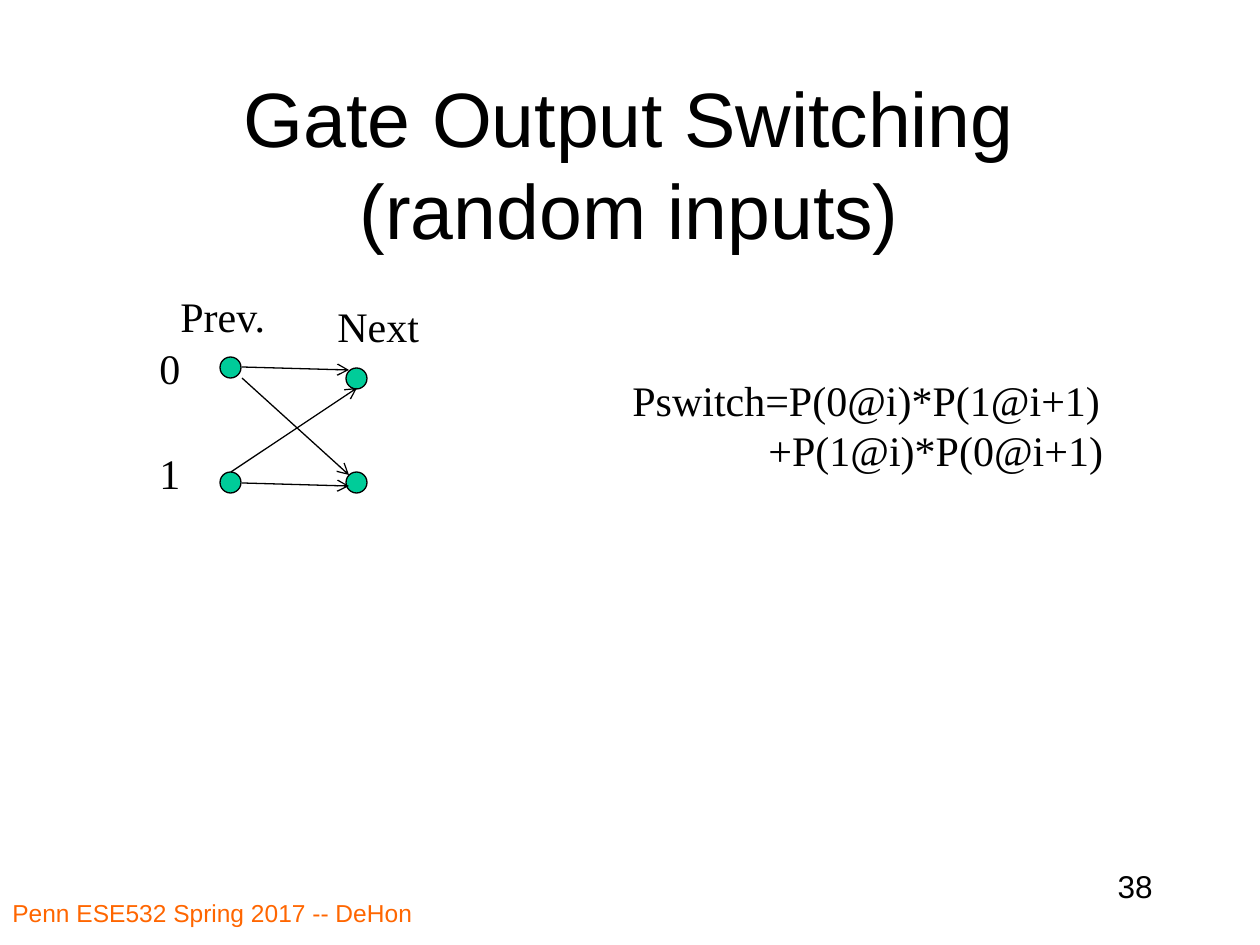
from typing import NamedTuple

from lxml import etree
from pptx import Presentation
from pptx.dml.color import RGBColor
from pptx.enum.shapes import MSO_CONNECTOR, MSO_SHAPE
from pptx.enum.text import MSO_ANCHOR, PP_ALIGN
from pptx.oxml.ns import qn
from pptx.slide import Slide
from pptx.util import Emu, Pt

LEFT, CENTER, RIGHT = PP_ALIGN.LEFT, PP_ALIGN.CENTER, PP_ALIGN.RIGHT
TOP, MIDDLE = MSO_ANCHOR.TOP, MSO_ANCHOR.MIDDLE
OVAL, STRAIGHT = MSO_SHAPE.OVAL, MSO_CONNECTOR.STRAIGHT

PX_PER_INCH = 126
BLACK, GREEN, ORANGE = "000000", "00CC99", "FF6600"
SANS, SERIF = "Arial", "Times New Roman"
DOT_SIZE = 21
LINE_WIDTH = Pt(0.75)
FORMULA_INDENT = 136


class Label(NamedTuple):
    lines: tuple[str, ...]
    left: int
    top: int
    width: int
    height: int
    size: int = 24
    font: str = SERIF
    color: str = BLACK
    align: PP_ALIGN = LEFT
    anchor: MSO_ANCHOR = TOP
    wrap: bool = False
    indent: int = 0  # left margin of the lines after the first


class Arrow(NamedTuple):
    start_x: int
    start_y: int
    end_x: int
    end_y: int


LABELS = (
    Label(("Penn ESE532 Spring 2017 -- DeHon",), 0, 892, 514, 53,
          14, SANS, ORANGE, wrap=True),
    Label(("38",), 903, 861, 262, 63, 18, SANS, align=RIGHT, wrap=True),
    Label(("Prev.",), 168, 284, 111, 63),
    Label(("Next",), 325, 294, 111, 63),
    Label(("0",), 147, 336, 47, 63),
    Label(("1",), 147, 441, 47, 63),
    Label(("Pswitch=P(0@i)*P(1@i+1)", "+P(1@i)*P(0@i+1)"),
          620, 368, 498, 115, indent=FORMULA_INDENT),
)
TITLE = Label(("Gate Output Switching", "(random inputs)"), 94, 84, 1071, 158,
              44, SANS, align=CENTER, anchor=MIDDLE, wrap=True)
DOTS = ((220, 357), (346, 368), (220, 472), (346, 472))
ARROWS = (
    Arrow(242, 367, 349, 370),
    Arrow(242, 378, 349, 475),
    Arrow(231, 472, 357, 388),
    Arrow(242, 483, 349, 486),
)


def px(length: int) -> Emu:
    return Emu(round(length * 914400 / PX_PER_INCH))


def rgb(value: str) -> RGBColor:
    return RGBColor.from_string(value)


def add_label(slide: Slide, label: Label) -> None:
    box = slide.shapes.add_textbox(
        px(label.left), px(label.top), px(label.width), px(label.height))
    frame = box.text_frame
    frame.word_wrap = label.wrap
    frame.vertical_anchor = label.anchor
    for number, line in enumerate(label.lines):
        para = frame.add_paragraph() if number else frame.paragraphs[0]
        para.alignment = label.align
        if number and label.indent:
            para._p.get_or_add_pPr().set("marL", str(px(label.indent)))
        span = para.add_run()
        span.text = line
        span.font.size = Pt(label.size)
        span.font.name = label.font
        span.font.color.rgb = rgb(label.color)


def add_dot(slide: Slide, left: int, top: int) -> None:
    dot = slide.shapes.add_shape(
        OVAL, px(left), px(top), px(DOT_SIZE), px(DOT_SIZE))
    dot.shadow.inherit = False
    dot.fill.solid()
    dot.fill.fore_color.rgb = rgb(GREEN)
    dot.line.color.rgb = rgb(BLACK)
    dot.line.width = LINE_WIDTH


def add_arrow(slide: Slide, arrow: Arrow) -> None:
    connector = slide.shapes.add_connector(
        STRAIGHT, *(px(length) for length in arrow))
    connector.line.color.rgb = rgb(BLACK)
    connector.line.width = LINE_WIDTH
    etree.SubElement(connector.line._get_or_add_ln(), qn("a:tailEnd"), type="arrow")
    etree.SubElement(connector._element.spPr, qn("a:effectLst"))


def main() -> None:
    deck = Presentation()
    deck.slide_width, deck.slide_height = px(1260), px(945)
    slide = deck.slides.add_slide(deck.slide_layouts[6])

    # Title
    add_label(slide, TITLE)

    # Transitions between previous and next output
    for left, top in DOTS:
        add_dot(slide, left, top)
    for arrow in ARROWS:
        add_arrow(slide, arrow)

    # Footer, state names and formula
    for label in LABELS:
        add_label(slide, label)

    deck.save("out.pptx")


if __name__ == "__main__":
    main()
